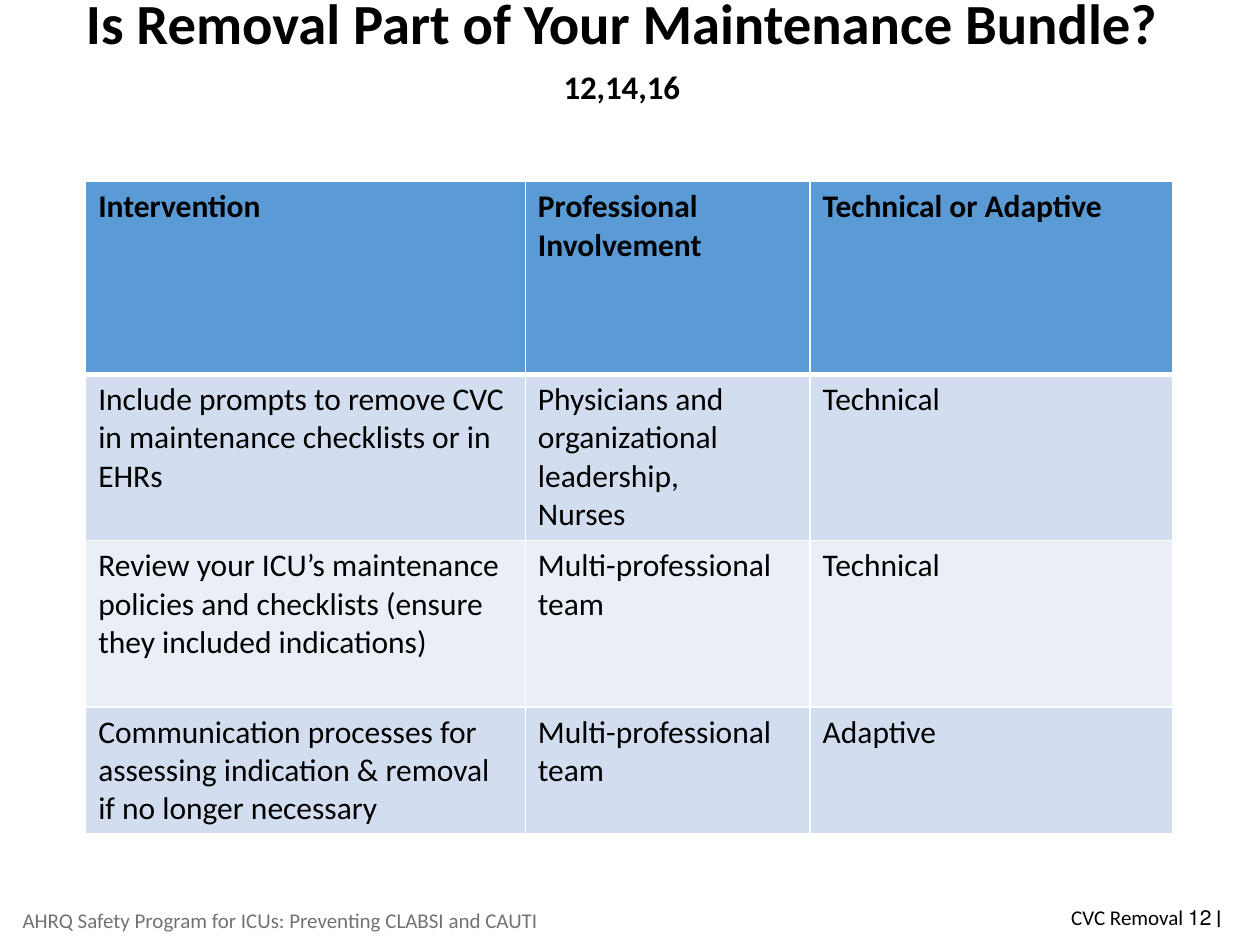
from dataclasses import dataclass

import pptx
import pptx.dml.color
import pptx.enum.text
import pptx.oxml
import pptx.oxml.ns
import pptx.util

# The slide is a grid of 100 columns by 75 rows; every place is given in grid steps.
GRID_STEP = 0.1
FONT = "Calibri"
COLORS = {
    "text": "000000",
    "footer": "767171",
    "header": "5B9BD5",
    "odd_row": "D2DEEF",
    "even_row": "EAEFF7",
    "border": "FFFFFF",
}
ALIGN = pptx.enum.text.PP_ALIGN


@dataclass(frozen=True)
class Label:
    text: str
    column: float
    row: float
    columns: float
    rows: float
    size: float
    align: ALIGN
    color: str = "text"
    bold: bool = False
    line_spacing: float = 1.0
    superscript: str = ""


@dataclass(frozen=True)
class TableRow:
    height: float
    fill: str
    cells: tuple[str, str, str]


LABELS = (
    Label("Is Removal Part of Your Maintenance Bundle?", 2.6, 0, 93.5, 8.9, 32.4,
          ALIGN.CENTER, bold=True, line_spacing=1.05, superscript="12,14,16"),
    Label("CVC Removal ׀ 12", 75.4, 70.8, 22.5, 4, 12, ALIGN.RIGHT),
    Label("AHRQ Safety Program for ICUs: Preventing CLABSI and CAUTI",
          0, 71, 44.5, 4, 12, ALIGN.CENTER, "footer"),
)

TABLE_COLUMN, TABLE_ROW = 6.8, 14.4
COLUMN_WIDTHS = (34.9, 22.6, 28.8)
TABLE_ROWS = (
    TableRow(15.3, "header",
             ("Intervention", "Professional Involvement", "Technical or Adaptive")),
    TableRow(13.2, "odd_row",
             ("Include prompts to remove CVC in maintenance checklists or in EHRs",
              "Physicians and organizational leadership,\nNurses", "Technical")),
    TableRow(13.2, "even_row",
             ("Review your ICU’s maintenance policies and checklists "
              "(ensure they included indications)",
              "Multi-professional team", "Technical")),
    TableRow(10.1, "odd_row",
             ("Communication processes for assessing indication & removal "
              "if no longer necessary",
              "Multi-professional team", "Adaptive")),
)


def steps(count: float) -> int:
    """Turn grid steps into a length."""
    return pptx.util.Inches(round(count * GRID_STEP, 2))


def rgb(name: str) -> pptx.dml.color.RGBColor:
    return pptx.dml.color.RGBColor.from_string(COLORS[name])


def format_runs(paragraph, size: float, color: str, bold: bool) -> None:
    for run in paragraph.runs:
        run.font.name = FONT
        run.font.size = pptx.util.Pt(size)
        run.font.bold = bold
        run.font.color.rgb = rgb(color)


def add_label(slide, label: Label) -> None:
    shape = slide.shapes.add_textbox(steps(label.column), steps(label.row),
                                     steps(label.columns), steps(label.rows))
    text_frame = shape.text_frame
    text_frame.word_wrap = True
    text_frame.vertical_anchor = pptx.enum.text.MSO_ANCHOR.MIDDLE
    text_frame.text = label.text
    paragraph = text_frame.paragraphs[0]
    paragraph.alignment = label.align
    paragraph.line_spacing = label.line_spacing
    if label.superscript:
        run = paragraph.add_run()
        run.text = label.superscript
        run.font._element.set("baseline", "30000")
    format_runs(paragraph, label.size, label.color, label.bold)


def set_borders(cell, widths: dict[str, float]) -> None:
    """Draw the cell's edges; the lines must come before the fill in the XML."""
    properties = cell._tc.get_or_add_tcPr()
    for index, (edge, width) in enumerate(widths.items()):
        line = pptx.oxml.parse_xml(
            f'<a:{edge} {pptx.oxml.ns.nsdecls("a")} w="{pptx.util.Pt(width)}">'
            f'<a:solidFill><a:srgbClr val="{COLORS["border"]}"/></a:solidFill>'
            f'</a:{edge}>')
        properties.insert(index, line)


def add_table(slide) -> None:
    frame = slide.shapes.add_table(
        len(TABLE_ROWS), len(COLUMN_WIDTHS), steps(TABLE_COLUMN), steps(TABLE_ROW),
        steps(sum(COLUMN_WIDTHS)), steps(sum(row.height for row in TABLE_ROWS)))
    table = frame.table
    for column, width in zip(table.columns, COLUMN_WIDTHS):
        column.width = steps(width)
    for row_index, row in enumerate(TABLE_ROWS):
        table.rows[row_index].height = steps(row.height)
        is_header = row_index == 0
        top = 3 if row_index == 1 else 1
        bottom = 3 if is_header else 1
        for column_index, text in enumerate(row.cells):
            cell = table.cell(row_index, column_index)
            cell.text_frame.text = text
            for paragraph in cell.text_frame.paragraphs:
                format_runs(paragraph, 18, "text", is_header)
            cell.fill.solid()
            cell.fill.fore_color.rgb = rgb(row.fill)
            set_borders(cell, {"lnL": 1, "lnR": 1, "lnT": top, "lnB": bottom})


def main() -> None:
    presentation = pptx.Presentation()
    presentation.slide_width = steps(100)
    presentation.slide_height = steps(75)
    slide = presentation.slides.add_slide(presentation.slide_layouts[6])
    for label in LABELS:
        add_label(slide, label)
    add_table(slide)
    presentation.save("out.pptx")


if __name__ == "__main__":
    main()
